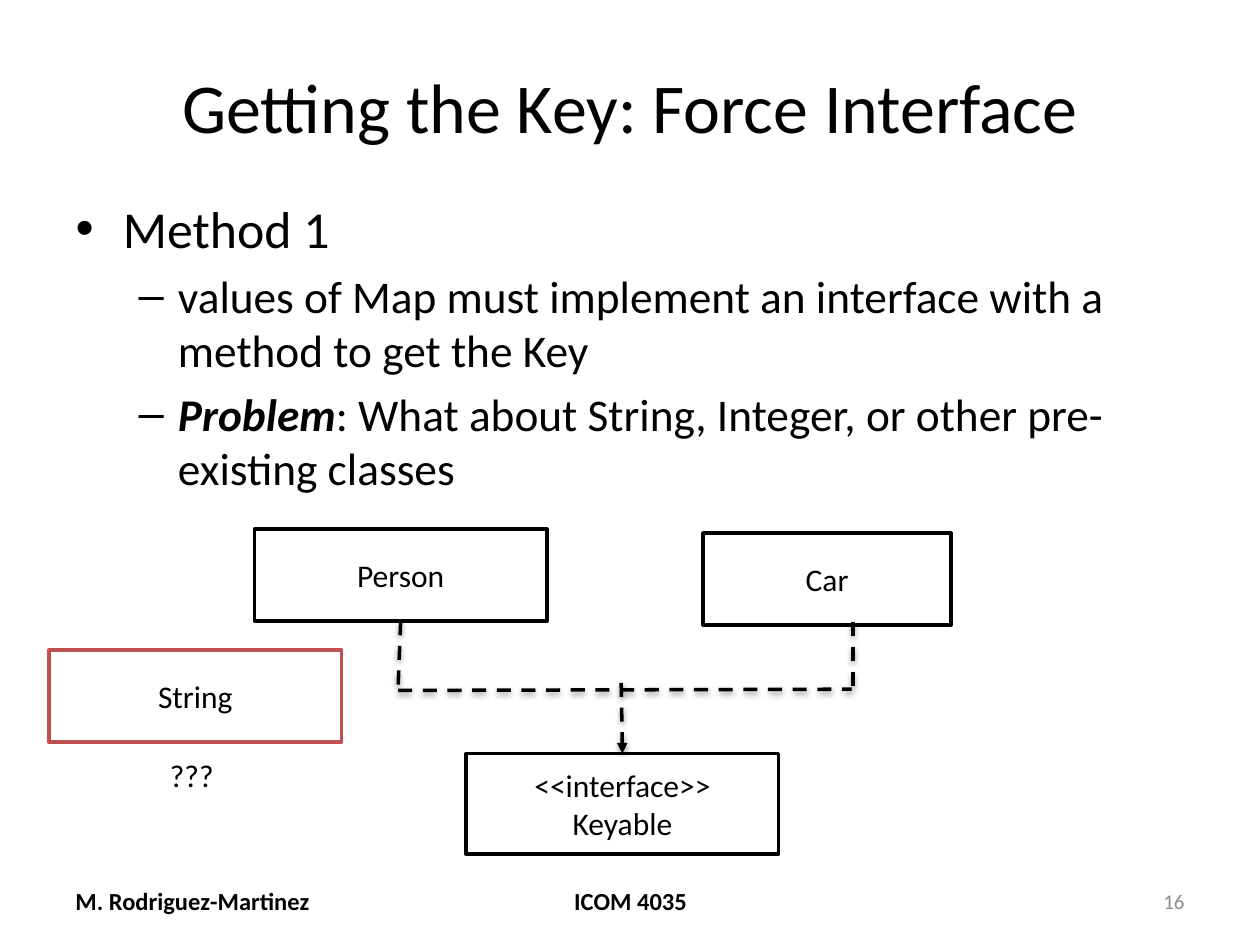
from dataclasses import dataclass

from lxml import etree
from pptx import Presentation
from pptx import util as u
from pptx.dml.color import RGBColor
from pptx.enum import dml, shapes, text
from pptx.oxml.ns import qn


@dataclass(frozen=True)
class Theme:
    font: str = "Calibri"
    ink: str = "000000"
    paper: str = "FFFFFF"
    muted: str = "8C8C8C"
    alert: str = "C0504D"
    title: float = 40
    levels: tuple = (29.6, 25.9)
    label: float = 18
    footer: float = 14
    number: float = 12
    line: float = 2


LEFT, CENTER, RIGHT = text.PP_ALIGN.LEFT, text.PP_ALIGN.CENTER, text.PP_ALIGN.RIGHT


class SlideBuilder:
    def __init__(self, slide, theme):
        self.slide = slide
        self.theme = theme

    def place(self, shape, box):
        shape.left, shape.top, shape.width, shape.height = map(u.Inches, box)

    def style(self, paragraph, size, color=None, bold=None, align=None):
        paragraph.alignment = align
        for run in paragraph.runs:
            run.font.name = self.theme.font
            run.font.size = u.Pt(size)
            run.font.color.rgb = RGBColor.from_string(color or self.theme.ink)
            if bold is not None:
                run.font.bold = bold

    def title(self, words, box):
        shape = self.slide.shapes.title
        self.place(shape, box)
        shape.text_frame.text = words
        shape.text_frame.auto_size = text.MSO_AUTO_SIZE.NONE
        self.style(shape.text_frame.paragraphs[0], self.theme.title, align=CENTER)

    def bullets(self, items, box):
        """Fill the body with (level, emphasised lead, words) items."""
        shape = self.slide.placeholders[1]
        self.place(shape, box)
        frame = shape.text_frame
        frame.auto_size = text.MSO_AUTO_SIZE.NONE
        for index, (level, lead, words) in enumerate(items):
            paragraph = frame.add_paragraph() if index else frame.paragraphs[0]
            paragraph.level = level
            if lead:
                run = paragraph.add_run()
                run.text = lead
                run.font.bold = run.font.italic = True
            paragraph.add_run().text = words
            self.style(paragraph, self.theme.levels[level])

    def label(self, words, box, size, color=None, bold=None, align=LEFT,
              anchor=text.MSO_ANCHOR.MIDDLE, wrap=True):
        shape = self.slide.shapes.add_textbox(*map(u.Inches, box))
        frame = shape.text_frame
        frame.word_wrap = wrap
        frame.vertical_anchor = anchor
        frame.text = words
        self.style(frame.paragraphs[0], size, color, bold, align)

    def class_box(self, words, box, outline=None):
        shape = self.slide.shapes.add_shape(
            shapes.MSO_SHAPE.RECTANGLE, *map(u.Inches, box))
        shape.shadow.inherit = False
        shape.fill.solid()
        shape.fill.fore_color.rgb = RGBColor.from_string(self.theme.paper)
        shape.line.color.rgb = RGBColor.from_string(outline or self.theme.ink)
        shape.line.width = u.Pt(self.theme.line)
        frame = shape.text_frame
        frame.vertical_anchor = text.MSO_ANCHOR.MIDDLE
        frame.text = words
        for paragraph in frame.paragraphs:
            self.style(paragraph, self.theme.label, align=CENTER)
        return shape

    def dashed_line(self, start, end, arrow=False):
        """Draw a dashed line that keeps the theme's soft shadow."""
        connector = self.slide.shapes.add_connector(
            shapes.MSO_CONNECTOR.STRAIGHT, *map(u.Inches, start + end))
        connector.line.color.rgb = RGBColor.from_string(self.theme.ink)
        connector.line.width = u.Pt(self.theme.line)
        connector.line.dash_style = dml.MSO_LINE.DASH
        if arrow:
            line = connector.line._get_or_add_ln()
            etree.SubElement(line, qn("a:tailEnd"), type="triangle")
        return connector


def main():
    presentation = Presentation()
    presentation.slide_width, presentation.slide_height = u.Inches(10), u.Inches(7.5)
    slide = presentation.slides.add_slide(presentation.slide_layouts[1])
    theme = Theme()
    builder = SlideBuilder(slide, theme)

    # Title and list
    builder.title("Getting the Key: Force Interface", (0.5, 0.3, 9, 1.07))
    builder.bullets([
        (0, "", "Method 1"),
        (1, "", "values of Map must implement an interface with a method to get the Key"),
        (1, "Problem", ": What about String, Integer, or other pre-existing classes"),
    ], (0.5, 1.51, 9, 2.24))

    # Footer
    builder.label("M. Rodriguez-Martinez", (0.5, 6.95, 2.33, 0.4), theme.footer, bold=True)
    builder.label("ICOM 4035", (3.42, 6.95, 3.17, 0.4), theme.footer, bold=True, align=CENTER)
    builder.label("16", (7.17, 6.95, 2.33, 0.4), theme.number, theme.muted, align=RIGHT)

    # Classes and the interface they share
    keyable = builder.class_box("<<interface>>\nKeyable", (3.7, 5.98, 2.48, 0.8))
    person = builder.class_box("Person", (2.02, 4.2, 2.32, 0.73))
    builder.class_box("Car", (5.58, 4.23, 1.97, 0.73))

    # Dashed links that meet on one bar above the interface
    builder.dashed_line((3.16, 5.48), (6.76, 5.47))
    builder.dashed_line((3.18, 4.93), (3.16, 5.45)).begin_connect(person, 2)
    builder.dashed_line((6.77, 4.94), (6.77, 5.47))
    builder.dashed_line((4.93, 5.42), (4.94, 5.98), arrow=True).end_connect(keyable, 0)

    # Class that cannot take part
    builder.class_box("String", (0.39, 5.16, 2.32, 0.73), theme.alert)
    builder.label("???", (1.25, 5.95, 0.55, 0.4), theme.label,
                  anchor=text.MSO_ANCHOR.TOP, wrap=False)

    presentation.save("out.pptx")


if __name__ == "__main__":
    main()
